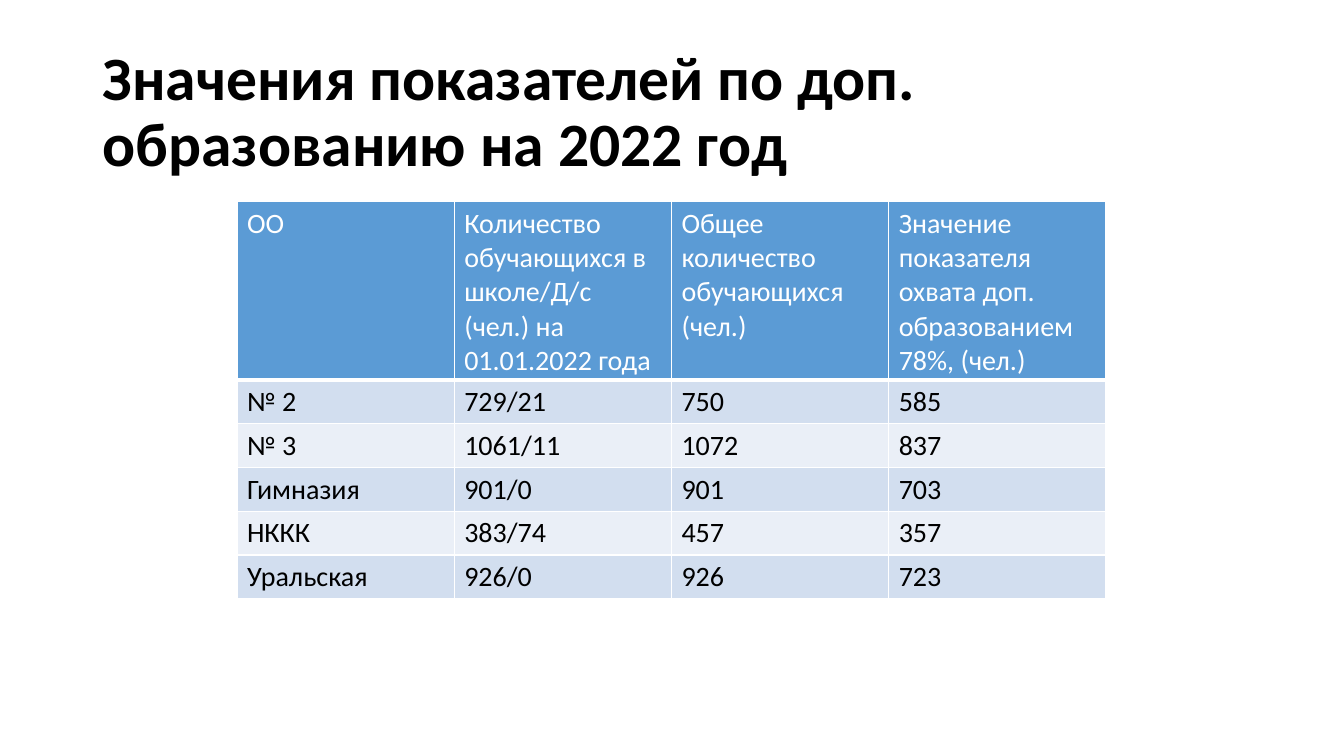
from lxml.etree import SubElement as Sub
from pptx import Presentation
from pptx.dml.color import RGBColor
from pptx.enum.text import MSO_ANCHOR as Anchor
from pptx.oxml.ns import qn
from pptx.util import Inches, Pt


def color(code):
    return RGBColor.from_string(code)


class Deck:
    face = "Calibri"
    black = "000000"
    white = "FFFFFF"
    head = "5B9BD5"
    bands = ("D2DEEF", "EAEFF7")

    def __init__(self):
        self.show = Presentation()
        self.show.slide_width = Inches(13.33)
        self.show.slide_height = Inches(7.5)
        self.slide = self.show.slides.add_slide(self.show.slide_layouts[6])

    def label(self, frame, text, size, ink, bold=False):
        frame.word_wrap = True
        para = frame.paragraphs[0]
        para.text = text
        font = para.font
        font.name = self.face
        font.size = Pt(size)
        font.bold = bold
        font.color.rgb = color(ink)
        return para

    def title(self, text, *place):
        box = self.slide.shapes.add_textbox(*map(Inches, place))
        frame = box.text_frame
        frame.vertical_anchor = Anchor.MIDDLE
        self.label(frame, text, 44, self.black, True).line_spacing = 0.9

    def edge(self, cell, side, width):
        props = cell._tc.get_or_add_tcPr()
        line = Sub(props, qn(f"a:ln{side}"), w=str(Pt(width)))
        fill = Sub(line, qn("a:solidFill"))
        Sub(fill, qn("a:srgbClr"), val=self.white)

    def cell(self, cell, text, row):
        top = row == 0
        self.label(cell.text_frame, text, 20, self.white if top else self.black)
        for side in "LRTB":
            self.edge(cell, side, 3 if top and side == "B" else 1)
        cell.fill.solid()
        cell.fill.fore_color.rgb = color(self.head if top else self.bands[(row - 1) % 2])

    def table(self, data, left, top, width, tall, low):
        count = len(data[0])
        high = tall + low * (len(data) - 1)
        place = map(Inches, (left, top, width, high))
        grid = self.slide.shapes.add_table(len(data), count, *place).table
        for col in grid.columns:
            col.width = Inches(width / count)
        for row, texts in enumerate(data):
            grid.rows[row].height = Inches(low if row else tall)
            for col, text in enumerate(texts):
                self.cell(grid.cell(row, col), text, row)

    def save(self):
        self.show.save("out.pptx")


def main():
    data = [
        ("ОО",
         "Количество обучающихся в школе/Д/с (чел.) на 01.01.2022 года",
         "Общее количество обучающихся (чел.)",
         "Значение показателя охвата доп. образованием 78%, (чел.)"),
        ("№ 2", "729/21", "750", "585"),
        ("№ 3", "1061/11", "1072", "837"),
        ("Гимназия", "901/0", "901", "703"),
        ("НККК", "383/74", "457", "357"),
        ("Уральская", "926/0", "926", "723"),
    ]
    deck = Deck()
    deck.title("Значения показателей по доп. образованию на 2022 год", 0.92, 0.4, 11.5, 1.45)
    deck.table(data, 2.35, 2, 8.62, 1.77, 0.43)
    deck.save()


if __name__ == "__main__":
    main()
